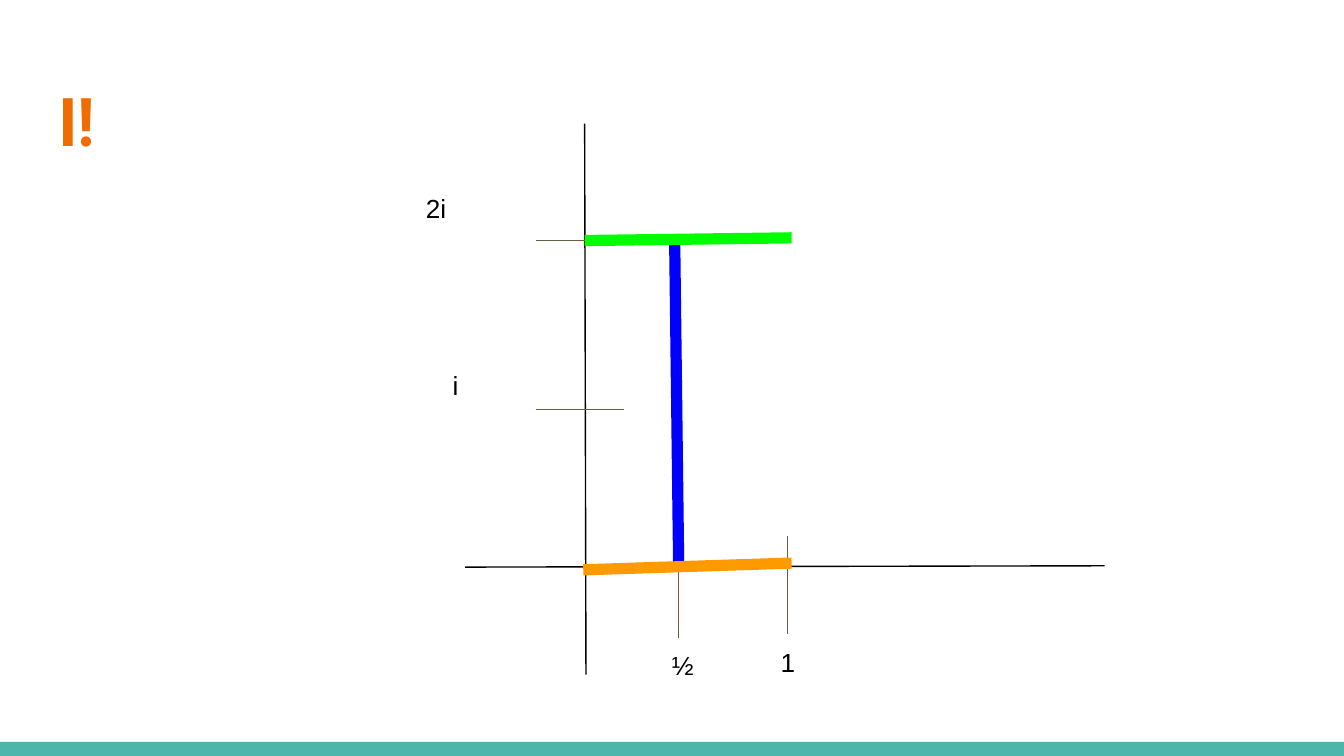
"""Build a slide that draws the letter I as three segments in the complex plane."""
from dataclasses import dataclass
from typing import NamedTuple

from lxml import etree
from pptx import Presentation
from pptx import util as u
from pptx.dml.color import RGBColor
from pptx.enum import shapes, text
from pptx.oxml.ns import qn
from pptx.slide import Slide

CELL = 0.1
COLUMNS, ROWS = 100, 56.25


@dataclass(frozen=True)
class Theme:
    """Colours, fonts, type sizes and line widths of the slide."""
    footer: str = "4DB6AC"
    title: str = "EF6C00"
    ink: str = "000000"
    tick: str = "695D46"
    stem: str = "0000FF"
    top_bar: str = "00FF00"
    bottom_bar: str = "FF9900"
    title_font: str = "Roboto Condensed"
    label_font: str = "Arial"
    title_size: float = 36
    label_size: float = 14
    thin: float = 0.75
    thick: float = 6


THEME = Theme()


class Point(NamedTuple):
    """A place on the grid."""
    column: float
    row: float


class Segment(NamedTuple):
    """A straight line between two grid points."""
    start: Point
    end: Point
    color: str
    width: float = THEME.thin


class Label(NamedTuple):
    """A line of text in a box on the grid."""
    words: str
    corner: Point
    columns: float
    rows: float
    font: str = THEME.label_font
    size: float = THEME.label_size
    color: str = THEME.ink
    bold: bool = False


def cells(count: float) -> u.Emu:
    """Turn a number of grid cells into a length."""
    return u.Inches(count * CELL)


def draw_segment(slide: Slide, segment: Segment) -> None:
    """Draw one straight line without a shadow."""
    line = slide.shapes.add_connector(
        shapes.MSO_CONNECTOR.STRAIGHT,
        *map(cells, segment.start), *map(cells, segment.end))
    line.line.color.rgb = RGBColor.from_string(segment.color)
    line.line.width = u.Pt(segment.width)
    etree.SubElement(line._element.spPr, qn("a:effectLst"))


def draw_label(slide: Slide, label: Label) -> None:
    """Write one label from the top left of its box."""
    box = slide.shapes.add_textbox(
        *map(cells, label.corner), cells(label.columns), cells(label.rows))
    frame = box.text_frame
    frame.word_wrap = True
    frame.vertical_anchor = text.MSO_ANCHOR.TOP
    frame.margin_left = frame.margin_right = cells(1)
    frame.margin_top = frame.margin_bottom = cells(1)
    paragraph = frame.paragraphs[0]
    paragraph.text = label.words
    font = paragraph.font
    font.name, font.size, font.bold = label.font, u.Pt(label.size), label.bold
    font.color.rgb = RGBColor.from_string(label.color)


def draw_footer(slide: Slide, rows: float) -> None:
    """Fill the lowest rows of the slide with a band."""
    band = slide.shapes.add_shape(
        shapes.MSO_SHAPE.RECTANGLE, 0, cells(ROWS - rows), cells(COLUMNS), cells(rows))
    band.shadow.inherit = False
    band.fill.solid()
    band.fill.fore_color.rgb = RGBColor.from_string(THEME.footer)
    band.line.fill.background()


def ticks() -> list[Segment]:
    """Give the marks for 1 and ½, then those for i and 2i."""
    across = [Segment(Point(column, row), Point(column, row + 7.3), THEME.tick)
              for column, row in ((58.6, 39.9), (50.5, 40.2))]
    up = [Segment(Point(46.4, row), Point(39.9, row), THEME.tick)
          for row in (30.45, 17.9)]
    return across + up


AXES = [
    Segment(Point(43.5, 9.2), Point(43.6, 50.2), THEME.ink),
    Segment(Point(82.2, 42.1), Point(34.6, 42.2), THEME.ink),
]
LETTER = [
    Segment(Point(50.2, 17.7), Point(50.5, 42.4), THEME.stem, THEME.thick),
    Segment(Point(43.5, 17.9), Point(58.9, 17.7), THEME.top_bar, THEME.thick),
    Segment(Point(43.4, 42.4), Point(58.9, 41.9), THEME.bottom_bar, THEME.thick),
]
LABELS = [
    Label("I!", Point(3.4, 4.9), 93.2, 7.7,
          THEME.title_font, THEME.title_size, THEME.title, True),
    Label("2i", Point(30.7, 13.3), 7.8, 8.3),
    Label("i", Point(32.7, 26.5), 5.4, 4.9),
    Label("1", Point(57.1, 47.3), 4.5, 1.8),
    Label("½", Point(49, 47.3), 4.5, 4.9),
]


def main() -> None:
    """Build and save the slide."""
    deck = Presentation()
    deck.slide_width, deck.slide_height = cells(COLUMNS), cells(ROWS)
    slide = deck.slides.add_slide(deck.slide_layouts[6])
    draw_footer(slide, 1.05)
    for segment in AXES + ticks() + LETTER:
        draw_segment(slide, segment)
    for label in LABELS:
        draw_label(slide, label)
    deck.save("out.pptx")


if __name__ == "__main__":
    main()
